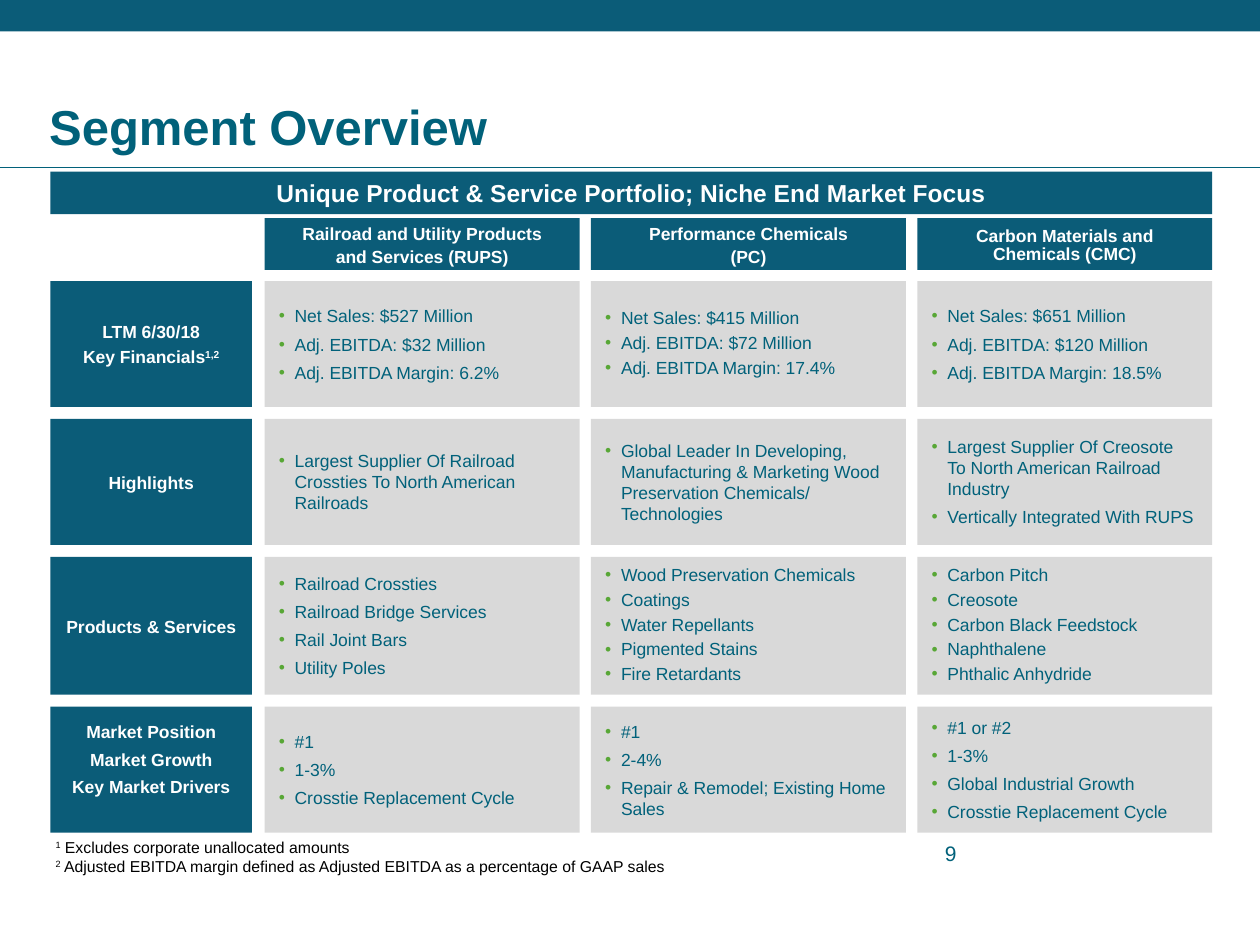
from dataclasses import dataclass
from lxml import etree
from pptx import Presentation
from pptx.dml import color as c
from pptx.enum import shapes, text
from pptx.oxml import ns
from pptx.util import Pt


@dataclass(frozen=True)
class Theme:
    """Colours, font and type sizes of the slide."""
    bar: str = "0B5C78"
    ink: str = "01617A"
    pale: str = "D9D9D9"
    dot: str = "58A736"
    white: str = "FFFFFF"
    black: str = "000000"
    font: str = "Arial"
    title: int = 28
    band: int = 14
    page: int = 12
    body: int = 10
    note: int = 9


T = Theme()
MID, TOP, LOW = text.MSO_ANCHOR.MIDDLE, text.MSO_ANCHOR.TOP, text.MSO_ANCHOR.BOTTOM
MEET, LEFT = text.PP_ALIGN.CENTER, text.PP_ALIGN.LEFT
PAD = (8, 4.3, 8, 4.3)
SLIM = (8, 7.2, 8, 4.3)
FLAT = (0, 0, 0, 0)
LABEL = dict(size=T.body, tint=T.white, bold=True, align=MEET)
TIGHT = dict(LABEL, gap=2.9, lead=0.85, pad=SLIM)

COLS = [(28.8, 115.2), (151.2, 180), (337.7, 180), (524.2, 168.5)]
HEADS = [
    ["Railroad and Utility Products", "and Services (RUPS)"],
    ["Performance Chemicals", "(PC)"],
    ["Carbon Materials and Chemicals (CMC)"],
]
ROWS = [
    (72, ["LTM 6/30/18", "Key Financials^1,2"], dict(LABEL, gap=2), (1, 0.85, 1), [
        ["Net Sales: $527 Million", "Adj. EBITDA: $32 Million", "Adj. EBITDA Margin: 6.2%"],
        ["Net Sales: $415 Million", "Adj. EBITDA: $72 Million", "Adj. EBITDA Margin: 17.4%"],
        ["Net Sales: $651 Million", "Adj. EBITDA: $120 Million", "Adj. EBITDA Margin: 18.5%"],
    ]),
    (72, ["Highlights"], TIGHT, (1, 1, 1), [
        ["Largest Supplier Of Railroad Crossties To North American Railroads"],
        ["Global Leader In Developing, Manufacturing & Marketing Wood "
         "Preservation Chemicals/ Technologies"],
        ["Largest Supplier Of Creosote \vTo North American Railroad Industry",
         "Vertically Integrated With RUPS"],
    ]),
    (78.8, ["Products & Services"], TIGHT, (1, 0.85, 0.85), [
        ["Railroad Crossties", "Railroad Bridge Services", "Rail Joint Bars", "Utility Poles"],
        ["Wood Preservation Chemicals", "Coatings", "Water Repellants",
         "Pigmented Stains", "Fire Retardants"],
        ["Carbon Pitch", "Creosote", "Carbon Black Feedstock", "Naphthalene",
         "Phthalic Anhydride"],
    ]),
    (72, ["Market Position", "Market Growth", "Key Market Drivers"],
     dict(LABEL, gap=5.4, lead=0.85, pad=(8, 4.3, 8, 14.3)), (1, 1, 1), [
        ["#1", "1-3%", "Crosstie Replacement Cycle"],
        ["#1", "2-4%", "Repair & Remodel; Existing Home Sales"],
        ["#1 or #2", "1-3%", "Global Industrial Growth", "Crosstie Replacement Cycle"],
    ]),
]


def rgb(tint):
    """Turn a hex string into a colour."""
    return c.RGBColor.from_string(tint)


def assign(thing, vals):
    """Set each attribute in a dict of values."""
    for name, val in vals.items():
        setattr(thing, name, val)


def bullet(para):
    """Give a paragraph a hanging green dot."""
    props = para._p.get_or_add_pPr()
    props.set("marL", str(Pt(9.2)))
    props.set("indent", str(Pt(-9)))
    hue = etree.SubElement(props, ns.qn("a:buClr"))
    etree.SubElement(hue, ns.qn("a:srgbClr"), val=T.dot)
    etree.SubElement(props, ns.qn("a:buFont"), typeface=T.font)
    etree.SubElement(props, ns.qn("a:buChar"), char="•")


def write(shape, lines, size, tint, bold=False, align=LEFT, gap=0, lead=1,
          pad=PAD, anchor=MID, dots=False):
    """Fill a shape with paragraphs; a caret starts and ends raised text."""
    frame = shape.text_frame
    sides = ("margin_left", "margin_top", "margin_right", "margin_bottom")
    assign(frame, dict(zip(sides, map(Pt, pad)), word_wrap=True, vertical_anchor=anchor))
    for i, line in enumerate(lines):
        para = frame.add_paragraph() if i else frame.paragraphs[0]
        if dots:
            bullet(para)
        after = Pt(gap if i < len(lines) - 1 else 0)
        assign(para, dict(alignment=align, line_spacing=lead, space_before=Pt(0),
                          space_after=after))
        for j, part in enumerate(line.split("^")):
            for k, piece in enumerate(part.split("\v")):
                if k:
                    para.add_line_break()
                if piece:
                    run = para.add_run()
                    run.text = piece
                    assign(run.font, dict(name=T.font, size=Pt(size), bold=bold))
                    run.font.color.rgb = rgb(tint)
                    if j % 2:
                        run._r.get_or_add_rPr().set("baseline", "30000")


def block(slide, box, fill, lines=(), **style):
    """Draw a plain filled rectangle, with text if given."""
    shape = slide.shapes.add_shape(shapes.MSO_SHAPE.RECTANGLE, *map(Pt, box))
    shape.shadow.inherit = False
    shape.fill.solid()
    shape.fill.fore_color.rgb = rgb(fill)
    shape.line.fill.background()
    if lines:
        write(shape, lines, **style)


def label(slide, box, lines, **style):
    """Place a text box."""
    write(slide.shapes.add_textbox(*map(Pt, box)), lines, **style)


def header(slide, box):
    """Draw the top bar, the title and the rule below it."""
    x, y, w, h = box
    block(slide, (x, y, w, 18), T.bar)
    label(slide, (x + 28.1, y + 18, 546.5, 70.6), ["Segment Overview"],
          size=T.title, tint=T.ink, bold=True, pad=FLAT, anchor=LOW)
    rule = slide.shapes.add_connector(shapes.MSO_CONNECTOR.STRAIGHT,
                                      *map(Pt, (x, y + h, x + w, y + h)))
    rule.line.color.rgb = rgb(T.ink)
    rule.line.width = Pt(0.75)
    etree.SubElement(rule._element.spPr, ns.qn("a:effectLst"))


def matrix(slide, box):
    """Draw the banner, column heads and rows of segment facts."""
    x, y, w, h = box
    block(slide, (x, y, w, 24.3), T.bar,
          ["Unique Product & Service Portfolio; Niche End Market Focus"],
          size=T.band, tint=T.white, bold=True, align=MEET, pad=(8, 3.6, 8, 3.6), anchor=TOP)
    cols = [(x + left - COLS[0][0], wide) for left, wide in COLS]
    for (left, wide), head in zip(cols[1:], HEADS):
        block(slide, (left, y + 26.5, wide, 29.7), T.bar, head, **TIGHT)
    top = y + 62.5
    for tall, name, style, leads, cells in ROWS:
        block(slide, (cols[0][0], top, cols[0][1], tall), T.bar, name, **style)
        for (left, wide), lead, facts in zip(cols[1:], leads, cells):
            block(slide, (left, top, wide, tall), T.pale, facts, size=T.body,
                  tint=T.ink, gap=4, lead=lead, dots=True)
        top += tall + 6.8


def footer(slide, box):
    """Place the footnotes and the page number."""
    x, y, w, h = box
    label(slide, (x, y, w, h),
          ["^1^ Excludes corporate unallocated amounts",
           "^2^ Adjusted EBITDA margin defined as Adjusted EBITDA as a percentage of GAAP sales"],
          size=T.note, tint=T.black, pad=(8, 3.6, 8, 3.6))
    label(slide, (x + 516.2, y + 5, 150, 18), ["9"], size=T.page, tint=T.ink,
          pad=FLAT, anchor=TOP)


def main():
    """Build and save the slide."""
    deck = Presentation()
    assign(deck, dict(slide_width=Pt(720), slide_height=Pt(540)))
    slide = deck.slides.add_slide(deck.slide_layouts[6])
    header(slide, (0, 0, 720, 95.8))
    matrix(slide, (28.8, 98.1, 663.9, 377.1))
    footer(slide, (23.8, 475.2, 659.5, 28.8))
    deck.save("out.pptx")


if __name__ == "__main__":
    main()
